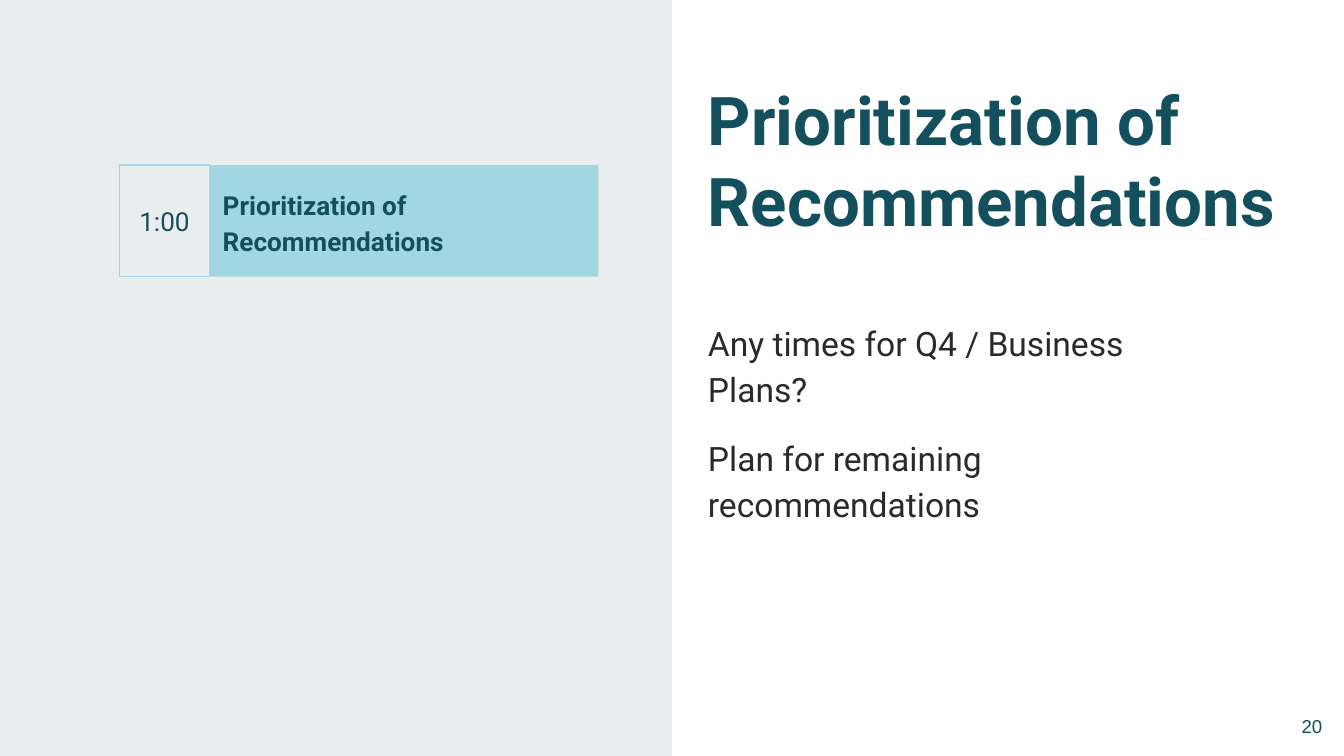
"""Build the agenda slide on prioritization of recommendations."""
from dataclasses import dataclass
from typing import Any, Optional

from pptx import Presentation
from pptx.dml.color import RGBColor
from pptx.enum.shapes import MSO_SHAPE
from pptx.enum.text import MSO_ANCHOR, PP_ALIGN
from pptx.util import Cm, Pt

TEAL, AQUA, PALE, WHITE, DARK = "134F5C", "A1D6E3", "E9EDEE", "FFFFFF", "2A2A2A"
TOPIC = "Prioritization of Recommendations"


@dataclass
class Box:
    left: float
    top: float
    width: float
    height: float
    fill: Optional[str] = None
    line: Optional[str] = None


def paint(target: Any, color: str) -> None:
    target.solid()
    target.fore_color.rgb = RGBColor.from_string(color)


def draw(slide: Any, box: Box) -> Any:
    place = [Cm(v) for v in (box.left, box.top, box.width, box.height)]
    if box.fill is None:
        return slide.shapes.add_textbox(*place)
    shape = slide.shapes.add_shape(MSO_SHAPE.RECTANGLE, *place)
    shape.shadow.inherit = False
    paint(shape.fill, box.fill)
    if box.line:
        paint(shape.line.fill, box.line)
        shape.line.width = Pt(0.75)
    else:
        shape.line.fill.background()
    return shape


def write(shape: Any, *lines: str, size: float, color: str = TEAL,
          font: str = "Roboto", bold: bool = False,
          align: PP_ALIGN = PP_ALIGN.LEFT,
          anchor: MSO_ANCHOR = MSO_ANCHOR.MIDDLE,
          pitch: float = 1.0, gap: float = 0) -> None:
    frame = shape.text_frame
    frame.word_wrap = True
    frame.vertical_anchor = anchor
    frame.margin_left = frame.margin_right = Cm(0.25)
    frame.margin_top = frame.margin_bottom = Cm(0.25)
    for i, line in enumerate(lines):
        para = frame.add_paragraph() if i else frame.paragraphs[0]
        para.alignment = align
        para.line_spacing = pitch
        para.space_before = Pt(gap if i else 0)
        run = para.add_run()
        run.text = line
        run.font.name = font
        run.font.size = Pt(size)
        run.font.bold = bold
        paint(run.font.fill, color)


def main() -> None:
    deck = Presentation()
    deck.slide_width, deck.slide_height = Cm(25.4), Cm(14.29)
    slide = deck.slides.add_slide(deck.slide_layouts[6])
    paint(slide.background.fill, PALE)

    draw(slide, Box(12.7, 0, 12.7, 14.29, WHITE))

    page = draw(slide, Box(23.72, 13.18, 1.52, 1.09))
    write(page, "20", size=10, font="Arial", align=PP_ALIGN.RIGHT)

    topic = draw(slide, Box(3.96, 3.12, 7.35, 2.11, AQUA))
    write(topic, TOPIC, size=14, bold=True, pitch=1.15)
    time = draw(slide, Box(2.26, 3.12, 1.7, 2.11, PALE, AQUA))
    write(time, "1:00", size=14, align=PP_ALIGN.CENTER)

    title = draw(slide, Box(13.13, 1.24, 12.52, 3.12))
    write(title, TOPIC, size=36, bold=True, anchor=MSO_ANCHOR.TOP)
    body = draw(slide, Box(13.13, 5.74, 9.37, 6.38))
    write(body, "Any times for Q4 / Business Plans?",
          "Plan for remaining recommendations", size=18, color=DARK,
          anchor=MSO_ANCHOR.TOP, pitch=1.15, gap=12)

    deck.save("out.pptx")


if __name__ == "__main__":
    main()
